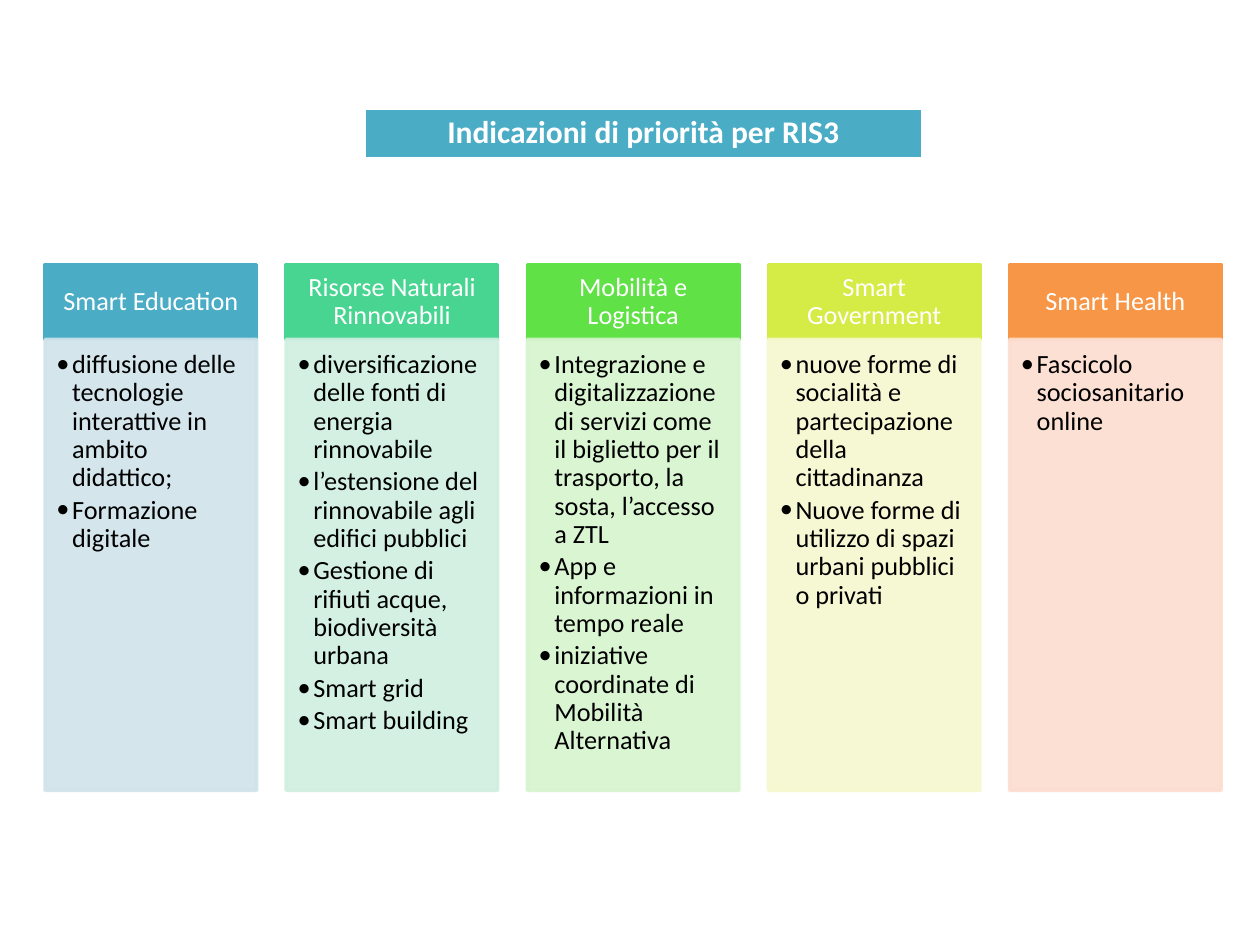
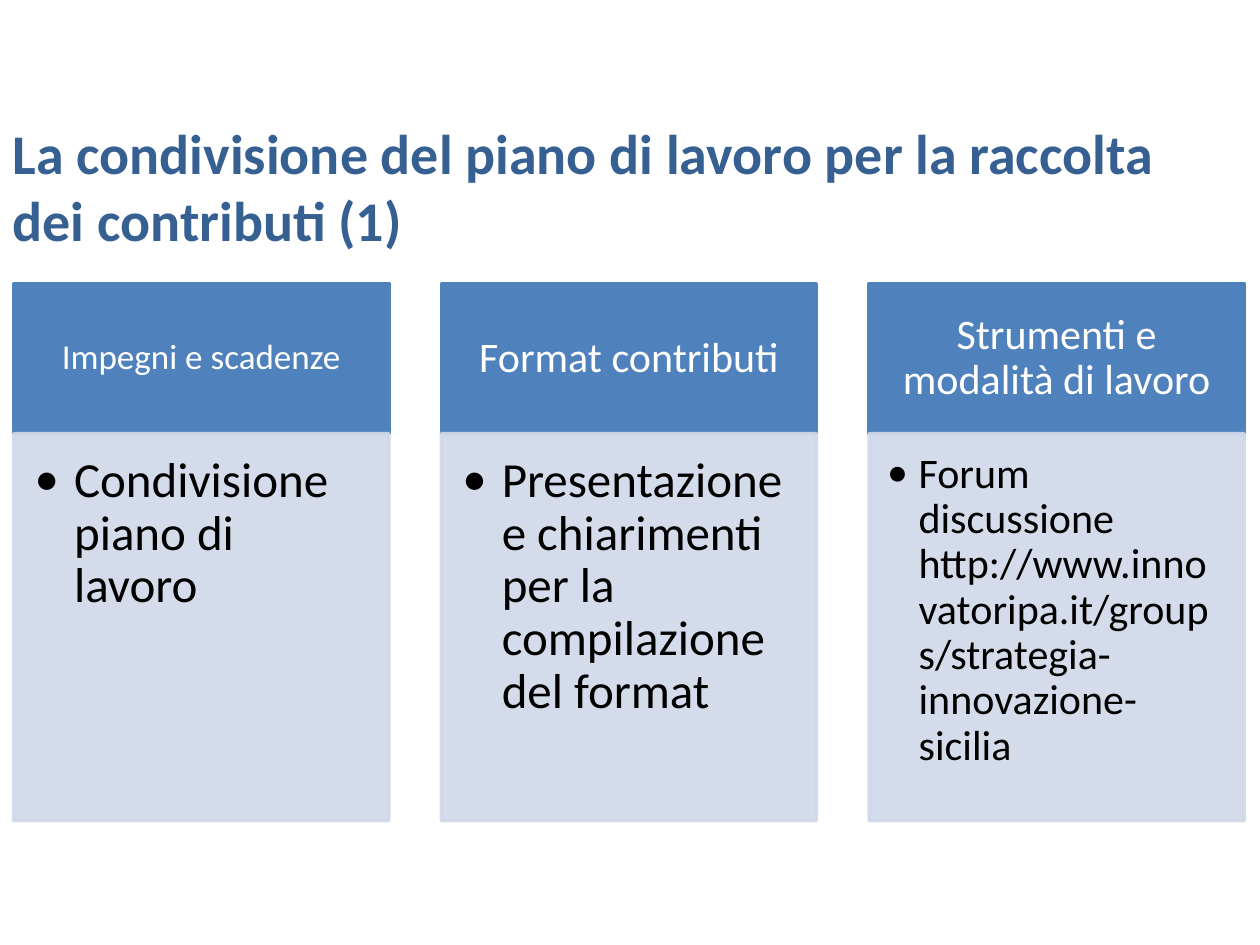
from lxml import etree
from pptx import Presentation
from pptx.dml.color import RGBColor
from pptx.enum.shapes import MSO_SHAPE
from pptx.enum.text import MSO_ANCHOR, MSO_AUTO_SIZE, PP_ALIGN
from pptx.oxml.ns import qn
from pptx.util import Pt

RECTANGLE = MSO_SHAPE.RECTANGLE
TOP, MIDDLE = MSO_ANCHOR.TOP, MSO_ANCHOR.MIDDLE
LEFT, CENTER = PP_ALIGN.LEFT, PP_ALIGN.CENTER
NO_AUTOFIT = MSO_AUTO_SIZE.NONE

FONT = "Calibri"
WHITE = RGBColor(0xFF, 0xFF, 0xFF)
BLACK = RGBColor(0x00, 0x00, 0x00)
NAVY = RGBColor(0x37, 0x60, 0x92)
BLUE = RGBColor(0x4F, 0x81, 0xBD)
PALE_BLUE = RGBColor(0xD0, 0xD8, 0xE8)
TEAL = RGBColor(0x4B, 0xAC, 0xC6)
PALE_TEAL = RGBColor(0xD0, 0xE3, 0xEA)
GREEN = RGBColor(0x48, 0xD4, 0x91)
PALE_GREEN = RGBColor(0xCF, 0xEF, 0xE1)
LIME = RGBColor(0x60, 0xE1, 0x46)
PALE_LIME = RGBColor(0xD6, 0xF4, 0xCE)
YELLOW = RGBColor(0xD5, 0xEC, 0x46)
PALE_YELLOW = RGBColor(0xF6, 0xF8, 0xCF)
ORANGE = RGBColor(0xF7, 0x96, 0x46)
PALE_ORANGE = RGBColor(0xFC, 0xDD, 0xCF)

GAP_RATIO = 0.14
HEADER_INSETS = (0.57, 0.33, 0.57, 0.33)
LIST_INSETS = (0.43, 0.43, 0.57, 0.64)

PRIORITIES = [
    ("Smart Education", TEAL, PALE_TEAL, [
        "diffusione delle tecnologie interattive in ambito didattico;",
        "Formazione digitale"]),
    ("Risorse Naturali Rinnovabili", GREEN, PALE_GREEN, [
        "diversificazione delle fonti di energia rinnovabile",
        "l’estensione del rinnovabile agli edifici pubblici",
        "Gestione di rifiuti acque, biodiversità urbana",
        "Smart grid",
        "Smart building"]),
    ("Mobilità e Logistica", LIME, PALE_LIME, [
        "Integrazione e digitalizzazione di servizi come il biglietto per il "
        "trasporto, la sosta, l’accesso a ZTL",
        "App e informazioni in tempo reale",
        "iniziative coordinate di Mobilità Alternativa"]),
    ("Smart Government", YELLOW, PALE_YELLOW, [
        "nuove forme di socialità e partecipazione della cittadinanza",
        "Nuove forme di utilizzo di spazi urbani pubblici o privati"]),
    ("Smart Health", ORANGE, PALE_ORANGE, [
        "Fascicolo sociosanitario online"]),
]

WORK_PLAN = [
    ("Impegni e scadenze", 20, ["Condivisione piano di lavoro"], 28, 22.5),
    ("Format contributi", 24,
     ["Presentazione e chiarimenti per la compilazione del format"], 28, 22.5),
    ("Strumenti e modalità di lavoro", 24,
     ["Forum discussione http://www.innovatoripa.it/groups/"
      "strategia-innovazione-sicilia"], 24, 18),
]


def write(shape, texts, size, color, bold=False, align=LEFT, anchor=TOP,
          insets=(7.2, 3.6, 7.2, 3.6), spacing=0.9, indent=0):
    """Fill a shape with formatted paragraphs, bulleted when indent is set."""
    frame = shape.text_frame
    frame.word_wrap = True
    frame.auto_size = NO_AUTOFIT
    frame.vertical_anchor = anchor
    (frame.margin_left, frame.margin_top,
     frame.margin_right, frame.margin_bottom) = map(Pt, insets)
    for number, text in enumerate(texts):
        paragraph = frame.add_paragraph() if number else frame.paragraphs[0]
        if indent:
            properties = paragraph._p.get_or_add_pPr()
            properties.set("marL", str(Pt(indent)))
            properties.set("indent", str(-Pt(indent)))
            etree.SubElement(properties, qn("a:buFont"), typeface=FONT)
            etree.SubElement(properties, qn("a:buChar"), char="•")
            paragraph.space_after = Pt(round(size * 0.15, 2))
        paragraph.alignment = align
        paragraph.line_spacing = spacing
        run = paragraph.add_run()
        run.text = text
        run.font.name = FONT
        run.font.size = Pt(size)
        run.font.bold = bold
        run.font.color.rgb = color


def paint(shape, fill, line, opacity=100):
    """Give a shape its fill and a two-point line, both at one opacity."""
    shape.fill.solid()
    shape.fill.fore_color.rgb = fill
    shape.line.color.rgb = line
    shape.line.width = Pt(2)
    if opacity < 100:
        for color in shape._element.spPr.iter(qn("a:srgbClr")):
            etree.SubElement(color, qn("a:alpha"), val=str(opacity * 1000))


def place(shape, left, top, width, height):
    """Move and size a shape."""
    shape.left, shape.top = Pt(left), Pt(top)
    shape.width, shape.height = Pt(width), Pt(height)


def add_panel(slide, box, color, opacity=100):
    """Add a plain rectangle of one colour."""
    panel = slide.shapes.add_shape(RECTANGLE, *map(Pt, box))
    panel.shadow.inherit = False
    paint(panel, color, color, opacity)
    return panel


def add_column(slide, box, header_height, heading, heading_size, items,
               item_size, indent, strong, pale):
    """Draw a coloured heading above its pale bulleted list."""
    left, top, width, height = box
    header = add_panel(slide, (left, top, width, header_height), strong)
    write(header, [heading], heading_size, WHITE, align=CENTER, anchor=MIDDLE,
          insets=[heading_size * ratio for ratio in HEADER_INSETS])
    body = add_panel(slide, (left, top + header_height, width,
                             height - header_height), pale, opacity=90)
    write(body, items, item_size, BLACK, indent=indent,
          insets=[item_size * ratio for ratio in LIST_INSETS])


def add_columns(slide, box, header_height, columns):
    """Spread columns evenly over a box, with gaps in proportion to width."""
    left, top, total, height = box
    count = len(columns)
    width = total / (count + (count - 1) * GAP_RATIO)
    for number, column in enumerate(columns):
        x = left + number * width * (1 + GAP_RATIO)
        add_column(slide, (x, top, width, height), header_height, *column)


def add_banner_title(slide, box, text):
    """Turn the title into a rounded coloured banner."""
    title = slide.shapes.title
    place(title, *box)
    geometry = etree.SubElement(title._element.spPr, qn("a:prstGeom"),
                                prst="roundRect")
    etree.SubElement(geometry, qn("a:avLst"))
    paint(title, TEAL, WHITE)
    write(title, [text], 18, WHITE, bold=True, align=CENTER, anchor=MIDDLE,
          insets=(5, 5, 5, 5))


def add_priorities_slide(deck, layout):
    """Build the slide of five priority areas."""
    slide = deck.slides.add_slide(layout)
    add_banner_title(slide, (208.2, 62, 319, 28.8),
                     "Indicazioni di priorità per RIS3")
    columns = [(heading, 15, items, 15, 9, strong, pale)
               for heading, strong, pale, items in PRIORITIES]
    add_columns(slide, (25.8, 151.2, 672, 300.5), 42.7, columns)


def add_work_plan_slide(deck, layout):
    """Build the slide of the three parts of the work plan."""
    slide = deck.slides.add_slide(layout)
    place(slide.shapes.title, 0, 64, 711.4, 124)
    write(slide.shapes.title,
          ["La condivisione del piano di lavoro per la raccolta "
           "dei contributi (1)"], 32, NAVY, bold=True, spacing=1)
    columns = [(*part, BLUE, PALE_BLUE) for part in WORK_PLAN]
    add_columns(slide, (7.8, 162, 703.2, 307), 85.8, columns)


def main():
    """Build and save the presentation."""
    deck = Presentation()
    deck.slide_width, deck.slide_height = Pt(720), Pt(540)
    title_only = deck.slide_layouts[5]
    add_priorities_slide(deck, title_only)
    add_work_plan_slide(deck, title_only)
    deck.save("out.pptx")


if __name__ == "__main__":
    main()
